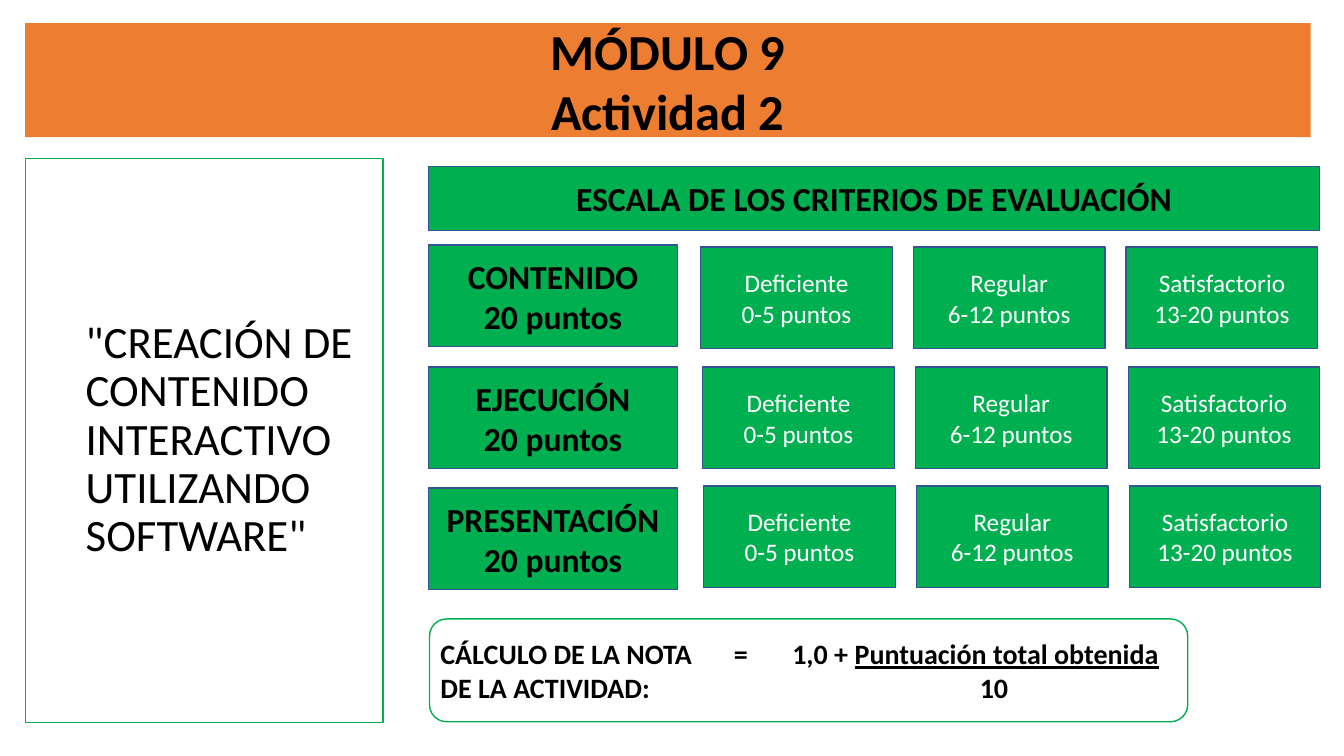
from lxml import etree
from pptx import Presentation
from pptx.dml.color import RGBColor
from pptx.enum.shapes import MSO_SHAPE
from pptx.enum.text import MSO_ANCHOR, MSO_AUTO_SIZE, PP_ALIGN
from pptx.oxml.ns import qn
from pptx.util import Pt

PX = 9144  # 100 px to the inch
RECT, ROUND = MSO_SHAPE.RECTANGLE, MSO_SHAPE.ROUNDED_RECTANGLE
MIDDLE, TOP = MSO_ANCHOR.MIDDLE, MSO_ANCHOR.TOP
LEFT, CENTER = PP_ALIGN.LEFT, PP_ALIGN.CENTER
FIXED = MSO_AUTO_SIZE.NONE

ORANGE = RGBColor(0xED, 0x7D, 0x31)
GREEN = RGBColor(0x00, 0xB0, 0x50)
BLUE = RGBColor(0x32, 0x54, 0x91)
BLACK = RGBColor(0, 0, 0)
WHITE = RGBColor(0xFF, 0xFF, 0xFF)

# criterion, label top, first level's left, levels' top
CRITERIA = [
    ("CONTENIDO", 243, 695, 245),
    ("EJECUCIÓN", 364, 697, 364),
    ("PRESENTACIÓN", 484, 698, 482),
]
LEVELS = [
    ("Deficiente", "0-5 puntos"),
    ("Regular", "6-12 puntos"),
    ("Satisfactorio", "13-20 puntos"),
]
LEVEL_STEP = 211


def emu(*box):
    return [n * PX for n in box]


def place(shape, box):
    shape.left, shape.top, shape.width, shape.height = emu(*box)


def style(par, size, color, bold, align):
    par.alignment = align
    font = par.font
    font.name, font.size, font.bold = "Calibri", Pt(size), bold
    font.color.rgb = color


def write(shape, lines, size, color=BLACK, bold=True, align=CENTER, anchor=MIDDLE):
    """Fill a shape with one paragraph per line and return the paragraphs."""
    frame = shape.text_frame
    frame.word_wrap, frame.auto_size = True, FIXED
    frame.vertical_anchor = anchor
    frame.text = "\n".join(lines)
    for par in frame.paragraphs:
        style(par, size, color, bold, align)
    return frame.paragraphs


def outline(shape, color):
    shape.line.color.rgb = color
    shape.line.width = Pt(1)


def add_box(slide, box, lines, size, color=BLACK, bold=True):
    shape = slide.shapes.add_shape(RECT, *emu(*box))
    shape.shadow.inherit = False
    shape.fill.solid()
    shape.fill.fore_color.rgb = GREEN
    outline(shape, BLUE)
    write(shape, lines, size, color, bold)


def add_text(slide, box, lines):
    shape = slide.shapes.add_textbox(*emu(*box))
    return write(shape, lines, 20, align=LEFT, anchor=TOP)


def set_tab(par, pos, align):
    props = par._p.get_or_add_pPr()
    tabs = etree.Element(qn("a:tabLst"))
    etree.SubElement(tabs, qn("a:tab"), pos=str(pos * PX), algn=align)
    props.insert(0, tabs)


def fill_title(slide):
    title = slide.shapes.title
    place(title, (25, 23, 1275, 113))
    title.fill.solid()
    title.fill.fore_color.rgb = ORANGE
    write(title, ["MÓDULO 9", "Actividad 2"], 36)


def fill_topic(slide):
    topic = slide.placeholders[1]
    place(topic, (25, 157, 355, 560))
    outline(topic, GREEN)
    lines = ['"CREACIÓN DE CONTENIDO INTERACTIVO', "UTILIZANDO", 'SOFTWARE"']
    for par in write(topic, lines, 32, bold=False, align=LEFT):
        par.level = 1
        par.line_spacing = 0.9
        par.space_before = Pt(0)
        props = par._p.get_or_add_pPr()
        props.set("marL", str(50 * PX))
        props.set("indent", "0")
        props.find(qn("a:defRPr")).addprevious(etree.Element(qn("a:buNone")))


def add_scale(slide):
    add_box(slide, (425, 165, 884, 64), ["ESCALA DE LOS CRITERIOS DE EVALUACIÓN"], 24)
    for name, top, left, row in CRITERIA:
        add_box(slide, (425, top, 247, 101), [name, "20 puntos"], 24)
        for i, level in enumerate(LEVELS):
            box = (left + i * LEVEL_STEP, row, 190, 101)
            add_box(slide, box, level, 18, WHITE, False)


def add_grade(slide):
    frame = slide.shapes.add_shape(ROUND, *emu(426, 614, 752, 102))
    frame.shadow.inherit = False
    frame.fill.background()
    outline(frame, GREEN)
    add_text(slide, (427, 627, 300, 77), ["CÁLCULO DE LA NOTA DE LA ACTIVIDAD:"])
    above, below = add_text(slide, (718, 627, 498, 77), ["=\t1,0 + ", "\t10"])
    total = above.add_run()
    total.text = "Puntuación total obtenida"
    total.font.underline = True
    set_tab(above, 58, "l")
    set_tab(below, 258, "ctr")


def main():
    deck = Presentation()
    deck.slide_width, deck.slide_height = emu(1333, 750)
    slide = deck.slides.add_slide(deck.slide_layouts[1])
    fill_title(slide)
    fill_topic(slide)
    add_scale(slide)
    add_grade(slide)
    deck.save("out.pptx")


if __name__ == "__main__":
    main()
